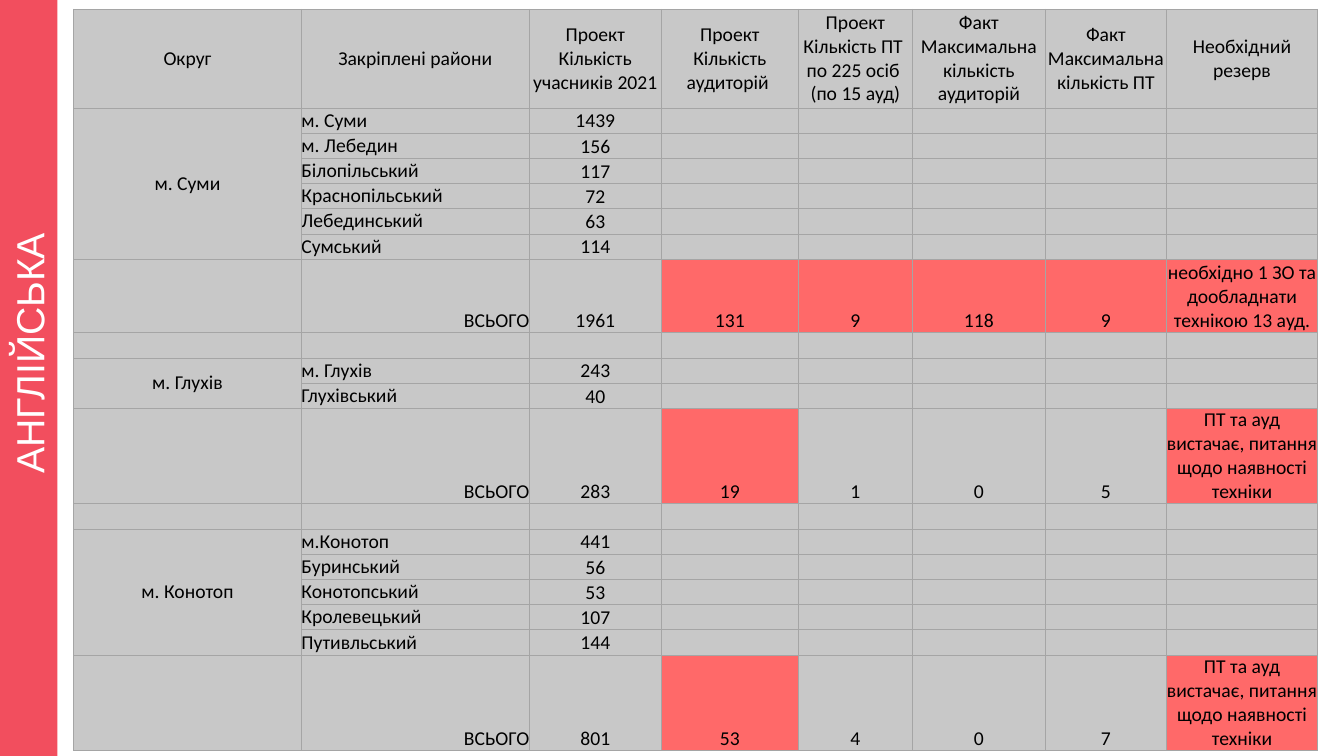
from lxml import etree
from pptx import Presentation
from pptx.dml.color import RGBColor
from pptx.enum import shapes, text
from pptx.oxml import ns
from pptx.util import Inches, Pt

COLORS = {"bar": "F24E5E", "title": "FFFFFF", "cell": "C8C8C8",
          "alert": "FF6969", "border": "A5A5A5", "text": "000000"}
TITLE = "АНГЛІЙСЬКА"
HEADERS = [
    "Округ",
    "Закріплені райони",
    "Проект Кількість учасників 2021",
    "Проект\nКількість аудиторій ",
    "Проект\nКількість ПТ \nпо 225 осіб \n(по 15 ауд)",
    "Факт\nМаксимальна кількість аудиторій",
    "Факт\nМаксимальна кількість ПТ",
    "Необхідний резерв",
]
TOTAL = "ВСЬОГО"
ENOUGH = "ПТ та ауд вистачає, питання щодо наявності техніки"
OKRUGS = [
    {"name": "м. Суми",
     "districts": [("м. Суми", 1439), ("м. Лебедин", 156), ("Білопільський", 117),
                   ("Краснопільський", 72), ("Лебединський", 63), ("Сумський", 114)],
     "totals": [1961, 131, 9, 118, 9, "необхідно 1 ЗО та дообладнати технікою 13 ауд."],
     "alerts": [3, 4, 5, 6, 7], "total_height": 0.73},
    {"name": "м. Глухів",
     "districts": [("м. Глухів", 243), ("Глухівський", 40)],
     "totals": [283, 19, 1, 0, 5, ENOUGH],
     "alerts": [3, 7], "total_height": 0.93},
    {"name": "м. Конотоп",
     "districts": [("м.Конотоп", 441), ("Буринський", 56), ("Конотопський", 53),
                   ("Кролевецький", 107), ("Путивльський", 144)],
     "totals": [801, 53, 4, 0, 7, ENOUGH],
     "alerts": [3, 7], "total_height": 0.93},
]
COLUMN_WIDTHS = [2.26, 2.26, 1.31, 1.36, 1.13, 1.32, 1.2, 1.5]
HEADER_HEIGHT, ROW_HEIGHT = 0.98, 0.25
SLIDE_WIDTH, SLIDE_HEIGHT, BAR_WIDTH = 13.33, 7.5, 0.57
TABLE_LEFT, TABLE_TOP = 0.73, 0.09
LEFT, CENTER, RIGHT = text.PP_ALIGN.LEFT, text.PP_ALIGN.CENTER, text.PP_ALIGN.RIGHT
MIDDLE, BOTTOM = text.MSO_ANCHOR.MIDDLE, text.MSO_ANCHOR.BOTTOM


def color(name):
    return RGBColor.from_string(COLORS[name])


def style_runs(paragraph, font, size, color_name):
    for run in paragraph.runs:
        run.font.name = font
        run.font.size = Pt(size)
        run.font.color.rgb = color(color_name)


def add_borders(cell):
    properties = cell._tc.get_or_add_tcPr()
    for position, side in enumerate(("lnL", "lnR", "lnT", "lnB")):
        line = etree.Element(ns.qn(f"a:{side}"), w=str(Pt(0.5)))
        fill = etree.SubElement(line, ns.qn("a:solidFill"))
        etree.SubElement(fill, ns.qn("a:srgbClr"), val=COLORS["border"])
        properties.insert(position, line)


def fill_cell(cell, content="", align=CENTER, anchor=BOTTOM, fill="cell"):
    cell.margin_left = cell.margin_right = cell.margin_top = cell.margin_bottom = 0
    cell.vertical_anchor = anchor
    cell.fill.solid()
    cell.fill.fore_color.rgb = color(fill)
    cell.text_frame.text = str(content)
    for paragraph in cell.text_frame.paragraphs:
        paragraph.alignment = align
        style_runs(paragraph, "Calibri", 14, "text")
        if not paragraph.runs:
            paragraph._p.get_or_add_endParaRPr().set("sz", "1400")
    add_borders(cell)


def add_bar(slide):
    bar = slide.shapes.add_shape(
        shapes.MSO_SHAPE.RECTANGLE,
        Inches((BAR_WIDTH - SLIDE_HEIGHT) / 2), Inches((SLIDE_HEIGHT - BAR_WIDTH) / 2),
        Inches(SLIDE_HEIGHT), Inches(BAR_WIDTH))
    bar.rotation = 270
    bar.shadow.inherit = False
    bar.fill.solid()
    bar.fill.fore_color.rgb = color("bar")
    bar.line.fill.background()
    bar.text_frame.text = TITLE
    bar.text_frame.word_wrap = True
    bar.text_frame.vertical_anchor = MIDDLE
    title = bar.text_frame.paragraphs[0]
    title.alignment = CENTER
    indent = title._p.get_or_add_pPr()
    indent.set("marL", str(Inches(0.49)))
    indent.set("indent", "0")
    style_runs(title, "Arial", 28, "title")


def layout_rows():
    blank = [""] * len(HEADERS)
    rows, heights, merges, alerts = [HEADERS], [HEADER_HEIGHT], [], set()
    for okrug in OKRUGS:
        if len(rows) > 1:
            rows.append(blank)
            heights.append(ROW_HEIGHT)
        first = len(rows)
        for number, (district, participants) in enumerate(okrug["districts"]):
            name = okrug["name"] if number == 0 else ""
            rows.append([name, district, participants] + blank[3:])
            heights.append(ROW_HEIGHT)
        merges.append((first, len(rows) - 1))
        alerts.update((len(rows), column) for column in okrug["alerts"])
        rows.append(["", TOTAL] + okrug["totals"])
        heights.append(okrug["total_height"])
    return rows, heights, merges, alerts


def add_schedule(slide):
    rows, heights, merges, alerts = layout_rows()
    table = slide.shapes.add_table(
        len(rows), len(HEADERS), Inches(TABLE_LEFT), Inches(TABLE_TOP),
        Inches(sum(COLUMN_WIDTHS)), Inches(sum(heights))).table
    table.first_row = table.horz_banding = False
    for column, width in zip(table.columns, COLUMN_WIDTHS):
        column.width = Inches(width)
    for r, (row, height) in enumerate(zip(rows, heights)):
        table.rows[r].height = Inches(height)
        for c, content in enumerate(row):
            align = CENTER
            if r > 0 and c == 1:
                align = RIGHT if content == TOTAL else LEFT
            middle = r == 0 or c == 0 or align == LEFT
            fill_cell(table.cell(r, c), content, align, MIDDLE if middle else BOTTOM,
                      "alert" if (r, c) in alerts else "cell")
    for first, last in merges:
        table.cell(first, 0).merge(table.cell(last, 0))


def main():
    deck = Presentation()
    deck.slide_width, deck.slide_height = Inches(SLIDE_WIDTH), Inches(SLIDE_HEIGHT)
    slide = deck.slides.add_slide(deck.slide_layouts[6])
    add_bar(slide)
    add_schedule(slide)
    deck.save("out.pptx")


if __name__ == "__main__":
    main()
